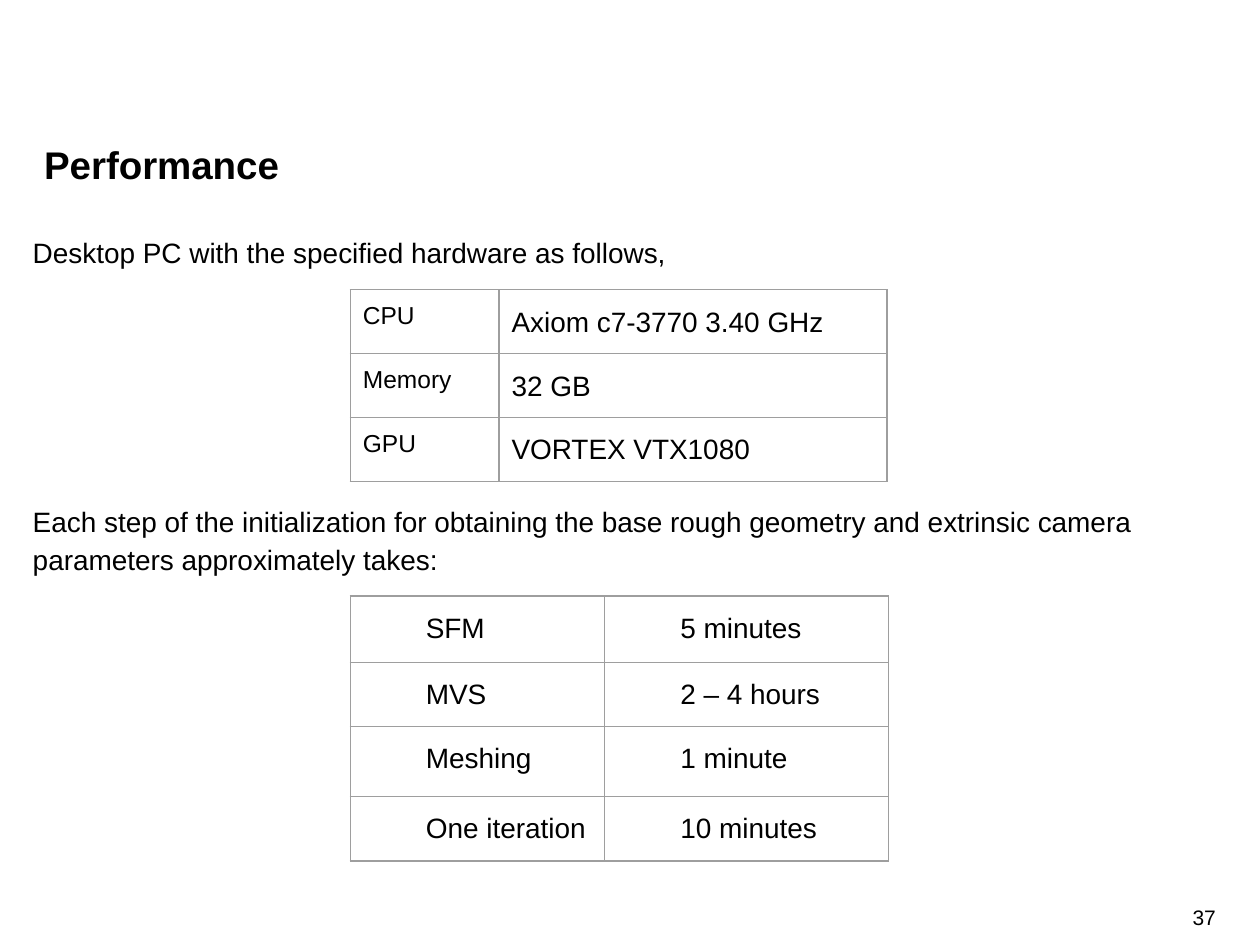
from pptx import Presentation
from pptx.dml.color import RGBColor
from pptx.enum.text import MSO_ANCHOR, PP_ALIGN
from pptx.oxml import parse_xml
from pptx.oxml.ns import nsdecls
from pptx.util import Inches, Pt


def rgb(hex_color):
    return RGBColor.from_string(hex_color)


class SlideBuilder:
    FONT = "Arial"
    INK = "000000"
    BORDER = "9E9E9E"
    BORDER_PT = 0.75
    CELL_MARGIN = 0.1

    def __init__(self, slide):
        self.slide = slide

    def style(self, paragraph, size, bold=False, spacing=None):
        paragraph.line_spacing = spacing
        for run in paragraph.runs:
            run.font.name = self.FONT
            run.font.size = Pt(size)
            run.font.bold = bold
            run.font.color.rgb = rgb(self.INK)

    def text(self, left, top, width, height, lines, size, bold=False, spacing=None,
             gap=0, align=PP_ALIGN.LEFT, anchor=MSO_ANCHOR.TOP):
        """Add a text box; gap is the space in points between its paragraphs."""
        box = self.slide.shapes.add_textbox(
            Inches(left), Inches(top), Inches(width), Inches(height))
        frame = box.text_frame
        frame.word_wrap = True
        frame.vertical_anchor = anchor
        frame.margin_left = frame.margin_right = 0
        frame.margin_top = frame.margin_bottom = 0
        frame.text = "\n".join(lines)
        for index, paragraph in enumerate(frame.paragraphs):
            paragraph.alignment = align
            if index:
                paragraph.space_before = Pt(gap)
            self.style(paragraph, size, bold, spacing)

    def border(self, cell):
        properties = cell._tc.get_or_add_tcPr()
        for position, side in enumerate(("lnL", "lnR", "lnT", "lnB")):
            properties.insert(position, parse_xml(
                f'<a:{side} {nsdecls("a")} w="{Pt(self.BORDER_PT)}"><a:solidFill>'
                f'<a:srgbClr val="{self.BORDER}"/></a:solidFill></a:{side}>'))

    def table(self, left, top, widths, heights, rows, column_styles, indent=0):
        """Add a bordered table; column_styles holds (size, line spacing) per column."""
        table = self.slide.shapes.add_table(
            len(heights), len(widths), Inches(left), Inches(top),
            Inches(sum(widths)), Inches(sum(heights))).table
        table.first_row = table.horz_banding = False
        for column, width in zip(table.columns, widths):
            column.width = Inches(width)
        for row, height, values in zip(table.rows, heights, rows):
            row.height = Inches(height)
            for cell, value, (size, spacing) in zip(row.cells, values, column_styles):
                cell.margin_left = cell.margin_right = Inches(self.CELL_MARGIN)
                cell.margin_top = cell.margin_bottom = Inches(self.CELL_MARGIN)
                cell.fill.background()
                self.border(cell)
                cell.text = value
                paragraph = cell.text_frame.paragraphs[0]
                if indent:
                    paragraph._p.get_or_add_pPr().set("marL", str(Inches(indent)))
                self.style(paragraph, size, spacing=spacing)


def main():
    deck = Presentation()
    deck.slide_width, deck.slide_height = Inches(10), Inches(7.5)
    builder = SlideBuilder(deck.slides.add_slide(deck.slide_layouts[6]))

    builder.text(0.26, 1.83, 9.31, 5.14, [
        "Desktop PC with the specified hardware as follows,",
        "Each step of the initialization for obtaining the base rough geometry "
        "and extrinsic camera parameters approximately takes:",
    ], 16, spacing=1.14, gap=132)
    builder.text(7.41, 7.08, 2.24, 0.4, ["37"], 12,
                 align=PP_ALIGN.RIGHT, anchor=MSO_ANCHOR.MIDDLE)
    builder.text(0.35, 1.09, 9.31, 0.45, ["Performance"], 22, bold=True, spacing=1.07)

    hardware = [
        ("CPU", "Axiom c7-3770 3.40 GHz"),
        ("Memory", "32 GB"),
        ("GPU", "VORTEX VTX1080"),
    ]
    builder.table(2.78, 2.3, [1.18, 3.08], [0.48] * len(hardware), hardware,
                  [(14, None), (16, 1.15)])

    step_times = [
        ("SFM", "5 minutes"),
        ("MVS", "2 – 4 hours"),
        ("Meshing", "1 minute"),
        ("One iteration", "10 minutes"),
    ]
    builder.table(2.78, 4.73, [2.02, 2.25], [0.53, 0.48, 0.56, 0.51], step_times,
                  [(16, 1.14)] * 2, indent=0.5)

    deck.save("out.pptx")


if __name__ == "__main__":
    main()
